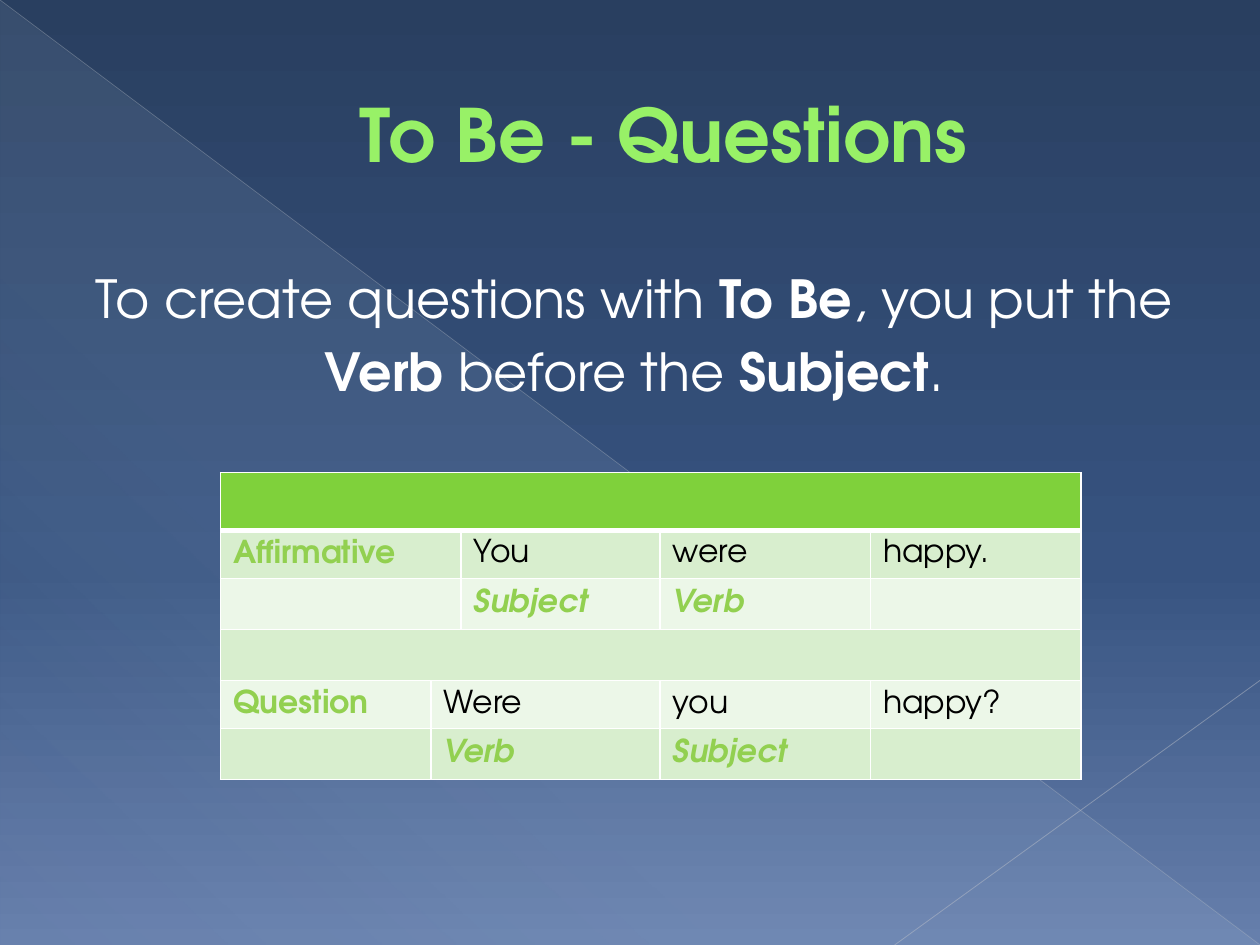
from lxml import etree
from pptx import Presentation
from pptx import util as u
from pptx.dml.color import RGBColor
from pptx.enum import shapes, text
from pptx.oxml.ns import qn

WIDE, HIGH = u.Inches(10), u.Inches(7.5)
FACE = "TeX Gyre Adventor"
WHITE = RGBColor(0xFF, 0xFF, 0xFF)
BLACK = RGBColor(0, 0, 0)
LIME = RGBColor(0x98, 0xF1, 0x67)
MOSS = RGBColor(0x58, 0x91, 0x29)
LEAF = RGBColor(0x92, 0xD0, 0x50)
HEAD = RGBColor(0x7F, 0xD1, 0x3B)
BANDS = RGBColor(0xD8, 0xEE, 0xCE), RGBColor(0xEC, 0xF7, 0xE8)
SKY = RGBColor(0xD6, 0xEC, 0xFF)
NIGHT = RGBColor(0x29, 0x3F, 0x60)
DUSK = RGBColor(0x37, 0x53, 0x80)
HAZE = RGBColor(0x66, 0x7F, 0xAC)
GREY = RGBColor(0xB7, 0xBC, 0xC5)
PALE = RGBColor(0xBF, 0xC3, 0xCB)


def add_tint(node, color, alpha=100):
    """Append a colour with its opacity in percent to an XML node."""
    tint = etree.SubElement(node, qn("a:srgbClr"), val=str(color))
    if alpha < 100:
        etree.SubElement(tint, qn("a:alpha"), val=str(alpha * 1000))


def add_line(node, tag, color, width, place):
    """Insert a solid line of a width in points into an XML node."""
    line = etree.Element(qn(tag), w=str(u.Pt(width)))
    add_tint(etree.SubElement(line, qn("a:solidFill")), color)
    node.insert(place, line)


def set_grad(fill, root, stops, angle):
    """Give a fill a linear gradient of (percent, colour, opacity) stops."""
    fill.gradient()
    fill.gradient_angle = 360 - angle
    group = root.find(".//" + qn("a:gsLst"))
    for old in list(group):
        group.remove(old)
    for pos, color, alpha in stops:
        stop = etree.SubElement(group, qn("a:gs"), pos=str(pos * 1000))
        add_tint(stop, color, alpha)


def draw_back(slide, wide, high):
    """Draw the gradient ground, the light triangle and the two thin lines."""
    set_grad(slide.background.fill, slide.element,
             [(0, NIGHT, 100), (60, DUSK, 100), (100, HAZE, 100)], 90)
    wedge = slide.shapes.add_shape(shapes.MSO_SHAPE.RIGHT_TRIANGLE,
                                   0, 0, wide, high)
    wedge.shadow.inherit = False
    wedge.line.fill.background()
    set_grad(wedge.fill, wedge.element,
             [(0, SKY, 10), (70, SKY, 8), (100, SKY, 1)], 133)
    for ends, color, width, alpha in (((0, 0, 1, 1), GREY, 0.39, 35),
                                      ((1, 0.72, 0.71, 1), PALE, 0.47, 45)):
        spots = [int(part * side) for part, side in zip(ends, (wide, high) * 2)]
        line = slide.shapes.add_connector(shapes.MSO_CONNECTOR.STRAIGHT, *spots)
        line.line.width = u.Pt(width)
        line.line.color.rgb = color
        tint = line.element.find(".//" + qn("a:srgbClr"))
        etree.SubElement(tint, qn("a:alpha"), val=str(alpha * 1000))
        etree.SubElement(line.element.spPr, qn("a:effectLst"))


def set_text(frame, rows, size, color, left, hang):
    """Write centred paragraphs whose runs are (words, bold) pairs."""
    frame.auto_size = text.MSO_AUTO_SIZE.NONE
    frame.word_wrap = True
    for num, runs in enumerate(rows):
        para = frame.add_paragraph() if num else frame.paragraphs[0]
        para.alignment = text.PP_ALIGN.CENTER
        props = para._p.get_or_add_pPr()
        props.set("marL", str(u.Inches(left)))
        props.set("indent", str(u.Inches(hang)))
        etree.SubElement(props, qn("a:buNone"))
        set_font(para.font, size, color)
        for words, bold in runs:
            run = para.add_run()
            run.text, run.font.bold = words, bold


def set_font(font, size, color):
    """Set face, size and colour of a font."""
    font.name, font.size = FACE, u.Pt(size)
    font.color.rgb = color


def set_box(slide, shape, left, top, wide, high):
    """Bring a placeholder to the front and place it."""
    slide.shapes.element.append(shape.element)
    shape.left, shape.top, shape.width, shape.height = left, top, wide, high


def draw_title(slide, *box):
    """Fill the title placeholder with outlined green words."""
    title = slide.shapes.title
    set_box(slide, title, *box)
    frame = title.text_frame
    frame.vertical_anchor = text.MSO_ANCHOR.MIDDLE
    set_text(frame, [[("To Be - Questions", True)]], 42, LIME, 0.53, 0)
    props = frame.paragraphs[0].runs[0]._r.get_or_add_rPr()
    add_line(props, "a:ln", MOSS, 0.5, 0)


def draw_body(slide, *box):
    """Fill the body placeholder with the rule on word order."""
    body = slide.placeholders[1]
    set_box(slide, body, *box)
    rows = [[("To create questions with ", False), ("To Be", True),
             (", you put the", False)],
            [("Verb", True), (" before the ", False), ("Subject", True),
             (".", False)]]
    set_text(body.text_frame, rows, 30, WHITE, 0.49, -0.42)


def draw_table(slide, *box):
    """Draw the table that sets a statement against a question."""
    cols = (1.67, 0.13, 1.58, 1.67, 1.67)
    rows = [("",) * 5,
            ("Affirmative", "", "You", "were", "happy."),
            ("", "", "Subject", "Verb", ""),
            ("",) * 5,
            ("Question", "Were", "", "you", "happy?"),
            ("", "Verb", "", "Subject", "")]
    spans = [(0, 4), (0, 1), (0, 1), (0, 4), (1, 2), (1, 2)]
    table = slide.shapes.add_table(len(rows), len(cols), *box).table
    for col, wide in zip(table.columns, cols):
        col.width = u.Inches(wide)
    for num, (words, (first, last)) in enumerate(zip(rows, spans)):
        table.rows[num].height = u.Inches(0.38 if num else 0.46)
        for col, word in enumerate(words):
            fill_cell(table.cell(num, col), word, num, col)
        table.cell(num, first).merge(table.cell(num, last))


def fill_cell(cell, word, num, col):
    """Colour, frame and letter one cell by its row and column."""
    cell.fill.solid()
    cell.fill.fore_color.rgb = BANDS[(num - 1) % 2] if num else HEAD
    cell.vertical_anchor = text.MSO_ANCHOR.MIDDLE
    for place, side in enumerate("LRTB"):
        thick = (num, side) in ((0, "B"), (1, "T"))
        add_line(cell._tc.get_or_add_tcPr(), "a:ln" + side, WHITE,
                 3 if thick else 1, place)
    if word:
        para = cell.text_frame.paragraphs[0]
        part = num in (2, 5)
        para.text = word
        set_font(para.font, 18, LEAF if part or col == 0 else BLACK)
        para.font.bold = part or col == 0
        para.font.italic = part


def main():
    """Build the slide and save it."""
    deck = Presentation()
    deck.slide_width, deck.slide_height = WIDE, HIGH
    slide = deck.slides.add_slide(deck.slide_layouts[1])
    edge, span = int(WIDE * 0.05), int(WIDE * 0.9)
    draw_back(slide, WIDE, HIGH)
    draw_title(slide, edge, u.Inches(0.29), span, u.Inches(1.53))
    draw_body(slide, edge, u.Inches(2.06), span, u.Inches(5))
    draw_table(slide, u.Inches(1.75), HIGH // 2, u.Inches(6.72), u.Inches(2.36))
    deck.save("out.pptx")


if __name__ == "__main__":
    main()
